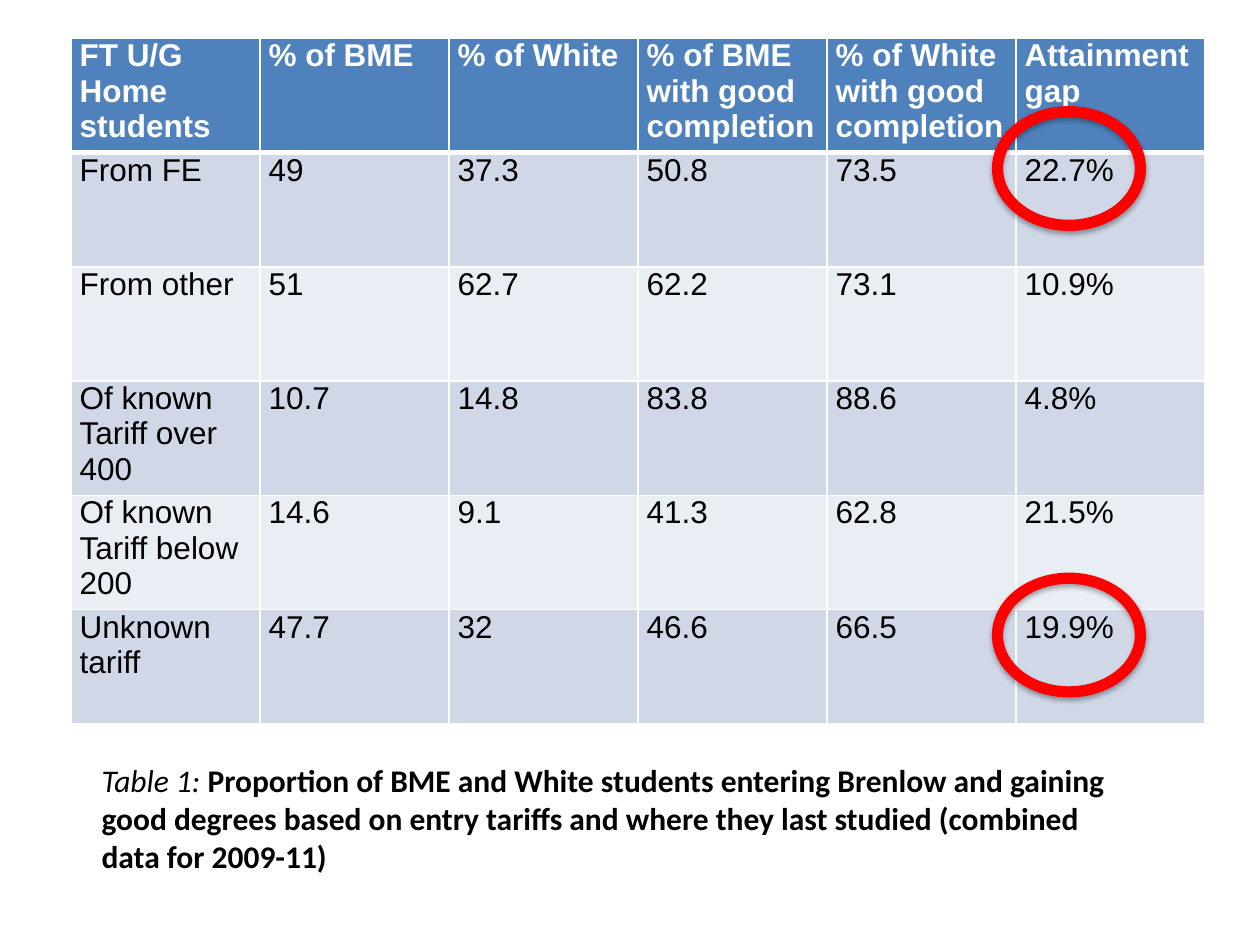
from lxml import etree
from pptx import Presentation
from pptx.dml.color import RGBColor
from pptx.enum.shapes import MSO_SHAPE
from pptx.enum.text import MSO_AUTO_SIZE
from pptx.oxml.ns import qn
from pptx.util import Pt

DONUT = MSO_SHAPE.DONUT
GROW = MSO_AUTO_SIZE.SHAPE_TO_FIT_TEXT
COLORS = {"head": "4F81BD", "odd": "D0D8E8", "even": "E9EDF4",
          "white": "FFFFFF", "black": "000000", "ring": "FF0000"}
BLANK = 6

ROWS = [
    ["FT U/G Home students", "% of BME", "% of White",
     "% of BME with good completion", "% of White with good completion",
     "Attainment gap"],
    ["From FE", "49", "37.3", "50.8", "73.5", "22.7%"],
    ["From other", "51", "62.7", "62.2", "73.1", "10.9%"],
    ["Of known Tariff over 400", "10.7", "14.8", "83.8", "88.6", "4.8%"],
    ["Of known Tariff below 200", "14.6", "9.1", "41.3", "62.8", "21.5%"],
    ["Unknown tariff", "47.7", "32", "46.6", "66.5", "19.9%"],
]
CAPTION = ("Proportion of BME and White students entering Brenlow and gaining "
           "good degrees based on entry tariffs and where they last studied "
           "(combined data for 2009-11)")


def rgb(name):
    return RGBColor.from_string(COLORS[name])


def add_text(para, text, font="Arial", size=18, color="black",
             bold=False, italic=False):
    run = para.add_run()
    run.text = text
    style = run.font
    style.name, style.size = font, Pt(size)
    style.bold, style.italic = bold, italic
    style.color.rgb = rgb(color)


def add_tag(parent, tag, **attrs):
    return etree.SubElement(parent, qn(tag),
                            {key: str(val) for key, val in attrs.items()})


def add_fill(parent, color, alpha=100):
    tone = add_tag(add_tag(parent, "a:solidFill"), "a:srgbClr",
                   val=COLORS[color])
    if alpha < 100:
        add_tag(tone, "a:alpha", val=alpha * 1000)


def set_edges(cell, top=1, bottom=1):
    props = cell._tc.get_or_add_tcPr()
    for side, width in (("L", 1), ("R", 1), ("T", top), ("B", bottom)):
        add_fill(add_tag(props, "a:ln" + side, w=Pt(width)), "white")


def add_grid(slide, left, top, width, height):
    count, wide = len(ROWS), len(ROWS[0])
    table = slide.shapes.add_table(count, wide, Pt(left), Pt(top),
                                   Pt(width), Pt(height)).table
    for col in table.columns:
        col.width = Pt(width / wide)
    for i, row in enumerate(ROWS):
        table.rows[i].height = Pt(height / count)
        head = i == 0
        fill = "head" if head else ("odd" if i % 2 else "even")
        for j, text in enumerate(row):
            cell = table.cell(i, j)
            cell.margin_left = cell.margin_right = Pt(5)
            cell.margin_top = cell.margin_bottom = 0
            set_edges(cell, top=3 if i == 1 else 1, bottom=3 if head else 1)
            cell.fill.solid()
            cell.fill.fore_color.rgb = rgb(fill)
            add_text(cell.text_frame.paragraphs[0], text, bold=head,
                     color="white" if head else "black")


def add_caption(slide, left, top, width, height):
    frame = slide.shapes.add_textbox(Pt(left), Pt(top),
                                     Pt(width), Pt(height)).text_frame
    frame.word_wrap = True
    frame.auto_size = GROW
    para = frame.paragraphs[0]
    add_text(para, "Table 1: ", font="Calibri", italic=True)
    add_text(para, CAPTION, font="Calibri", bold=True)


def add_ring(slide, left, top, width, height):
    ring = slide.shapes.add_shape(DONUT, Pt(left), Pt(top),
                                  Pt(width), Pt(height))
    ring.adjustments[0] = 0.08
    ring.fill.solid()
    ring.fill.fore_color.rgb = rgb("ring")
    ring.line.color.rgb = rgb("ring")
    ring.line.width = Pt(0.75)
    # Soft shadow straight below
    effects = add_tag(ring._element.spPr, "a:effectLst")
    shadow = add_tag(effects, "a:outerShdw", blurRad=Pt(3.1), dist=Pt(1.8),
                     dir=90 * 60000, rotWithShape=0)
    add_fill_tone = add_tag(shadow, "a:srgbClr", val=COLORS["black"])
    add_tag(add_fill_tone, "a:alpha", val=35000)


def main():
    deck = Presentation()
    deck.slide_width, deck.slide_height = Pt(720), Pt(540)
    slide = deck.slides.add_slide(deck.slide_layouts[BLANK])
    # Results table
    add_grid(slide, 40.5, 21.9, 648, 391.8)
    # Caption under the table
    add_caption(slide, 51, 431.3, 603.5, 72.7)
    # Rings around the gaps that stand out
    for top in (61, 327.6):
        add_ring(slide, 567.2, top, 87.3, 70.6)
    deck.save("out.pptx")


if __name__ == "__main__":
    main()
